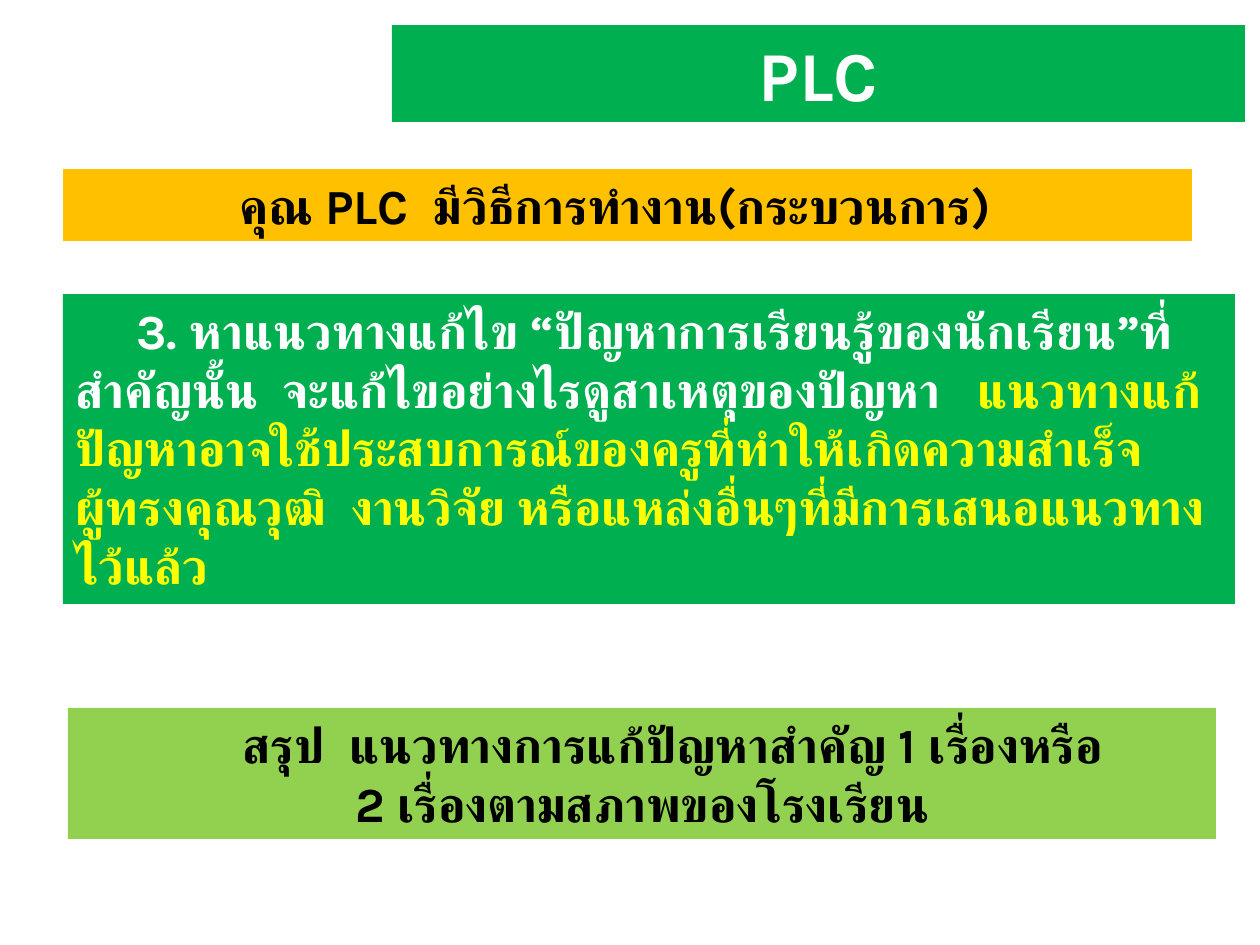
import pptx
import pptx.dml.color
import pptx.enum.text
import pptx.oxml.ns
import pptx.util
from lxml import etree

RGBColor = pptx.dml.color.RGBColor
GREEN = RGBColor(0x00, 0xB0, 0x50)
AMBER = RGBColor(0xFF, 0xC0, 0x00)
LIME = RGBColor(0x92, 0xD0, 0x50)
WHITE = RGBColor(0xFF, 0xFF, 0xFF)
BLACK = RGBColor(0x00, 0x00, 0x00)
YELLOW = RGBColor(0xFF, 0xFF, 0x00)

FONT = "Karla"
PX_PER_INCH = 126
FIRST_LINE_INDENT = 61
CENTER = pptx.enum.text.PP_ALIGN.CENTER
LEFT = pptx.enum.text.PP_ALIGN.LEFT


def px(length):
    return round(length * pptx.util.Inches(1) / PX_PER_INCH)


def style_run(run, size, color):
    run.font.name = FONT
    run.font.size = pptx.util.Pt(size)
    run.font.bold = True
    run.font.color.rgb = color
    # Thai text takes its typeface from the complex-script font.
    complex_font = etree.SubElement(run.font._element, pptx.oxml.ns.qn("a:cs"))
    complex_font.set("typeface", FONT)


def add_band(slide, box, fill, text, color, size=28, align=CENTER, indent=0):
    """Add a filled band of bold text and return its text frame."""
    band = slide.shapes.add_textbox(*map(px, box))
    band.fill.solid()
    band.fill.fore_color.rgb = fill
    frame = band.text_frame
    frame.word_wrap = True
    frame.auto_size = pptx.enum.text.MSO_AUTO_SIZE.SHAPE_TO_FIT_TEXT
    paragraph = frame.paragraphs[0]
    paragraph.text = text
    paragraph.alignment = align
    if indent:
        paragraph._p.get_or_add_pPr().set("indent", str(px(indent)))
    for run in paragraph.runs:
        style_run(run, size, color)
    return frame


def add_title(slide, box):
    add_band(slide, box, GREEN, "PLC", WHITE, size=40)


def add_question(slide, box):
    question = add_band(slide, box, AMBER, "คุณ PLC  มีวิธีการทำงาน(กระบวนการ)", BLACK)
    question.margin_right = px(37)


def add_step(slide, box):
    step = add_band(
        slide, box, GREEN,
        "3. หาแนวทางแก้ไข “ปัญหาการเรียนรู้ของนักเรียน”ที่สำคัญนั้น  "
        "จะแก้ไขอย่างไรดูสาเหตุของปัญหา   ",
        WHITE, align=LEFT, indent=FIRST_LINE_INDENT)
    guidance = step.paragraphs[0].add_run()
    guidance.text = (
        "แนวทางแก้ปัญหาอาจใช้ประสบการณ์ของครูที่ทำให้เกิดความสำเร็จ   "
        "ผู้ทรงคุณวุฒิ  งานวิจัย หรือแหล่งอื่นๆที่มีการเสนอแนวทางไว้แล้ว")
    style_run(guidance, 28, YELLOW)


def add_summary(slide, box):
    add_band(
        slide, box, LIME,
        "สรุป  แนวทางการแก้ปัญหาสำคัญ 1 เรื่องหรือ\v2 เรื่องตามสภาพของโรงเรียน",
        BLACK, indent=FIRST_LINE_INDENT)


def main():
    presentation = pptx.Presentation()
    presentation.slide_width = px(1260)
    presentation.slide_height = px(945)
    slide = presentation.slides.add_slide(presentation.slide_layouts[6])
    add_title(slide, (392, 25, 853, 97))
    add_question(slide, (63, 169, 1129, 72))
    add_step(slide, (63, 294, 1172, 310))
    add_summary(slide, (68, 708, 1148, 131))
    presentation.save("out.pptx")


if __name__ == "__main__":
    main()
